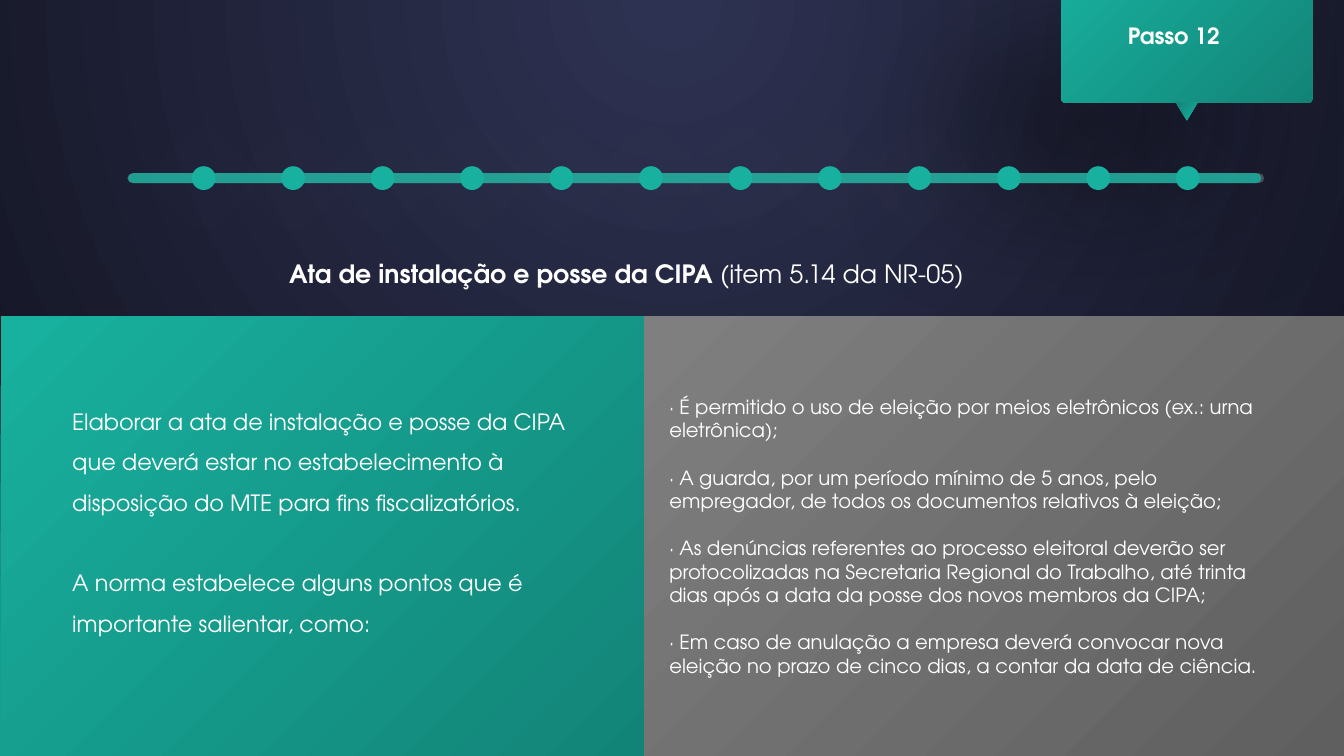
from lxml.etree import SubElement
from pptx import Presentation
from pptx.dml.color import RGBColor
from pptx.enum.shapes import MSO_CONNECTOR as CONNECTOR, MSO_SHAPE as SHAPE
from pptx.enum.text import MSO_AUTO_SIZE as AUTO_SIZE
from pptx.oxml.ns import qn
from pptx.util import Pt

FONT = "TeX Gyre Adventor"
COLORS = {
    "navy": "2E3252", "midnight": "161828",
    "teal": "18B09E", "deep_teal": "128477",
    "gray": "7F7F7F", "dark_gray": "5F5F5F",
    "track": "D9D9D9", "silver": "D8D8D8",
    "white": "FFFFFF", "black": "000000",
}
STEPS = 12
STEP_GAP = 63.9
TITLE = [("Ata de instalação e posse da CIPA ", True), ("(item 5.14 da NR-05)", False)]
INTRO = [
    "Elaborar a ata de instalação e posse da CIPA que deverá estar no estabelecimento "
    "à disposição do MTE para fins fiscalizatórios.",
    "A norma estabelece alguns pontos que é importante salientar, como:",
]
RULES = [
    "· É permitido o uso de eleição por meios eletrônicos (ex.: urna eletrônica);",
    "· A guarda, por um período mínimo de 5 anos, pelo empregador, de todos os "
    "documentos relativos à eleição;",
    "· As denúncias referentes ao processo eleitoral deverão ser protocolizadas na "
    "Secretaria Regional do Trabalho, até trinta dias após a data da posse dos novos "
    "membros da CIPA;",
    "· Em caso de anulação a empresa deverá convocar nova eleição no prazo de cinco "
    "dias, a contar da data de ciência.",
]


def color(name):
    return RGBColor.from_string(COLORS[name])


def set_gradient(fill, names):
    fill.gradient()
    for stop, name, position in zip(fill.gradient_stops, names, (0.02, 1)):
        stop.color.rgb = color(name)
        stop.position = position


def add_shape(slide, kind, box, names):
    shape = slide.shapes.add_shape(kind, *map(Pt, box))
    shape.shadow.inherit = False
    shape.line.fill.background()
    if len(names) == 1:
        shape.fill.solid()
        shape.fill.fore_color.rgb = color(names[0])
    else:
        set_gradient(shape.fill, names)
        shape.fill.gradient_angle = 315
    return shape


def add_shadow(shape, name, distance=0, angle=0):
    effects = shape._element.spPr.find(qn("a:effectLst"))
    shadow = SubElement(effects, qn("a:outerShdw"), blurRad=str(Pt(100)),
                        dist=str(Pt(distance)), dir=str(angle * 60000),
                        algn="ctr", rotWithShape="0")
    tint = SubElement(shadow, qn("a:srgbClr"), val=COLORS[name])
    SubElement(tint, qn("a:alpha"), val="40000")


def add_text(slide, box, paragraphs, size, spacing=1.0, gap=0):
    text_box = slide.shapes.add_textbox(*map(Pt, box))
    frame = text_box.text_frame
    frame.word_wrap = True
    frame.auto_size = AUTO_SIZE.SHAPE_TO_FIT_TEXT
    for index, runs in enumerate(paragraphs):
        paragraph = frame.add_paragraph() if index else frame.paragraphs[0]
        paragraph.line_spacing = spacing
        if index:
            paragraph.space_before = Pt(gap)
        for text, bold in runs:
            run = paragraph.add_run()
            run.text = text
            run.font.name = FONT
            run.font.size = Pt(size)
            run.font.bold = bold
            run.font.color.rgb = color("white")


def paint_background(slide):
    set_gradient(slide.background.fill, ("navy", "midnight"))
    gradient = slide._element.find(".//" + qn("a:gradFill"))
    linear = gradient.find(qn("a:lin"))
    if linear is not None:
        gradient.remove(linear)
    circle = SubElement(gradient, qn("a:path"), path="circle")
    SubElement(circle, qn("a:fillToRect"), l="50000", t="-80000", r="50000", b="180000")


def add_step_label(slide, left, top, width, height):
    teal = ("teal", "deep_teal")
    card = add_shape(slide, SHAPE.ROUNDED_RECTANGLE, (left, top, width, height), teal)
    card.adjustments[0] = 0.03
    add_shadow(card, "black", 96, 135)
    pointer = add_shape(slide, SHAPE.ISOSCELES_TRIANGLE,
                        (left + width / 2 - 7.5, top + height, 15, 12.5), teal)
    pointer.rotation = 180
    add_text(slide, (left + 40.5, top + 35, 125, 32.5), [[("Passo 12", True)]], 16, 1.5)


def add_track(slide, left, right, middle, name, alpha):
    track = slide.shapes.add_connector(CONNECTOR.STRAIGHT, Pt(left), Pt(middle),
                                       Pt(right), Pt(middle))
    track.line.width = Pt(7)
    track.line.color.rgb = color(name)
    properties = track._element.spPr
    properties.find(qn("a:ln")).set("cap", "rnd")
    tint = properties.find(".//" + qn("a:srgbClr"))
    SubElement(tint, qn("a:alpha"), val=str(alpha * 1000))
    SubElement(properties, qn("a:effectLst"))


def add_timeline(slide, left, middle, width):
    add_track(slide, left, left + width, middle, "track", 25)
    add_track(slide, left + 0.5, left + width - 2, middle, "teal", 82)
    for step in range(STEPS):
        center = left + 51 + step * STEP_GAP
        for size, glow in ((17, "white"), (9.5, "silver")):
            dot = add_shape(slide, SHAPE.OVAL,
                            (center - size / 2, middle - size / 2, size, size), ("teal",))
            add_shadow(dot, glow)


def add_panel(slide, box, names, text_box, texts, size, spacing, gap):
    left, top, width, height = box
    add_shape(slide, SHAPE.RECTANGLE, box, names)
    inset, drop, text_width, text_height = text_box
    add_text(slide, (left + inset, top + drop, text_width, text_height),
             [[(text, False)] for text in texts], size, spacing, gap)


def main():
    presentation = Presentation()
    presentation.slide_width = Pt(960)
    presentation.slide_height = Pt(540)
    slide = presentation.slides.add_slide(presentation.slide_layouts[6])
    paint_background(slide)
    add_step_label(slide, 758, -32, 179.5, 105.5)
    add_timeline(slide, 94.5, 127.25, 805)
    add_panel(slide, (0.5, 226, 459.5, 314), ("teal", "deep_teal"),
              (44, 52.5, 372.5, 178), INTRO, 16, 1.5, 28.8)
    add_panel(slide, (460, 226, 500, 314), ("gray", "dark_gray"),
              (11, 52.5, 453.5, 211), RULES, 14, 1.0, 16.8)
    add_text(slide, (199.5, 170.5, 566.5, 36), [TITLE], 18, 1.5)
    presentation.save("out.pptx")


if __name__ == "__main__":
    main()
